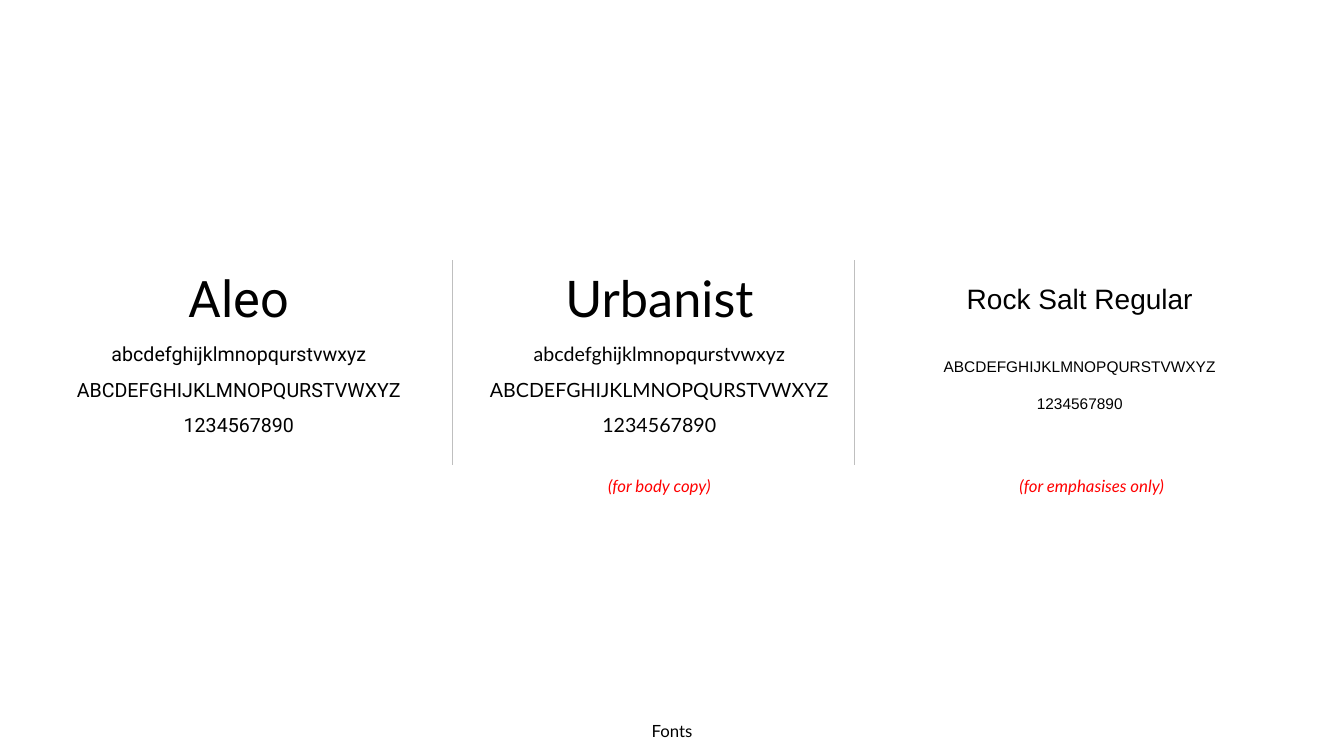
from pptx import Presentation
from pptx import util as u
from pptx.dml.color import RGBColor
from pptx.enum import shapes, text
from pptx.oxml import parse_xml
from pptx.oxml.ns import nsdecls

LOWER = "abcdefghijklmnopqurstvwxyz"
UPPER = "ABCDEFGHIJKLMNOPQURSTVWXYZ"
DIGITS = "1234567890"
TOP, WIDE, STEP = 2.3, 3.9, 4.17


def color(code):
    """Turn a hex string into a colour."""
    return RGBColor.from_string(code)


def place(shape, box):
    """Move a shape to a box given in inches."""
    shape.left, shape.top, shape.width, shape.height = map(u.Inches, box)


def write(shape, lines, face, size, gap=1.5, tint="000000", slant=False):
    """Fill a shape with centred lines of text."""
    frame = shape.text_frame
    frame.word_wrap = True
    frame.auto_size = text.MSO_AUTO_SIZE.SHAPE_TO_FIT_TEXT
    frame.vertical_anchor = text.MSO_ANCHOR.TOP
    for i, line in enumerate(lines):
        para = frame.add_paragraph() if i else frame.paragraphs[0]
        para.alignment = text.PP_ALIGN.CENTER
        para.line_spacing = gap
        run = para.add_run()
        run.text = line
        font = run.font
        font.name, font.size, font.italic = face, u.Pt(size), slant
        font.color.rgb = color(tint)


def label(slide, box, lines, face, size, **style):
    """Add a text box."""
    shape = slide.shapes.add_textbox(*map(u.Inches, box))
    write(shape, lines, face, size, **style)


def sample(slide, box, name, face, lines):
    """Show a font name above its letters."""
    x, y, w, h = box
    label(slide, (x, y, w, 0.93), [name], face, 36)
    label(slide, (x, y + 0.93, w, h - 0.93), lines, face, 14)


def accent(slide, box, name, face, lines):
    """Show the smaller emphasis font and its letters."""
    x, y, w, h = box
    label(slide, (x, y + 0.28, w, 0.56), [name], face, 20)
    label(slide, (x, y + 1.01, w, 0.8), lines, face, 11, gap=2.0)


def note(slide, box, line):
    """Add a red usage note."""
    label(slide, box, [line], "Lato", 12, tint="FF0000", slant=True)


def rule(slide, x, top, end):
    """Draw a thin upright divider."""
    line = slide.shapes.add_connector(
        shapes.MSO_CONNECTOR.STRAIGHT, *map(u.Inches, (x, end, x, top)))
    line.line.color.rgb = color("BFBFBF")
    line.line.width = u.Pt(0.5)
    line._element.spPr.append(parse_xml(f"<a:effectLst {nsdecls('a')}/>"))


def heading(slide, box, line):
    """Set the slide title in its box."""
    title = slide.shapes.title
    place(title, box)
    write(title, [line], "Lato", 12, gap=1.0)


def main():
    """Build and save the font slide."""
    deck = Presentation()
    deck.slide_width, deck.slide_height = u.Inches(13.33), u.Inches(7.5)
    slide = deck.slides.add_slide(deck.slide_layouts[5])
    heading(slide, (0, 7.1, 13.33, 0.3), "Fonts")

    cols = [(0.42 + STEP * i, TOP, WIDE, 2.06) for i in range(3)]
    full = [LOWER, UPPER, DIGITS]
    sample(slide, cols[0], "Aleo", "Roboto", full)
    sample(slide, cols[1], "Urbanist", "Lato", full)
    accent(slide, cols[2], "Rock Salt Regular", "Arial", full[1:])

    for x in (4.49, 8.47):
        rule(slide, x, 2.58, 4.61)
    for x, line in ((4.59, "(for body copy)"),
                    (8.88, "(for emphasises only)")):
        note(slide, (x, 4.57, WIDE, 0.37), line)
    deck.save("out.pptx")


if __name__ == "__main__":
    main()
